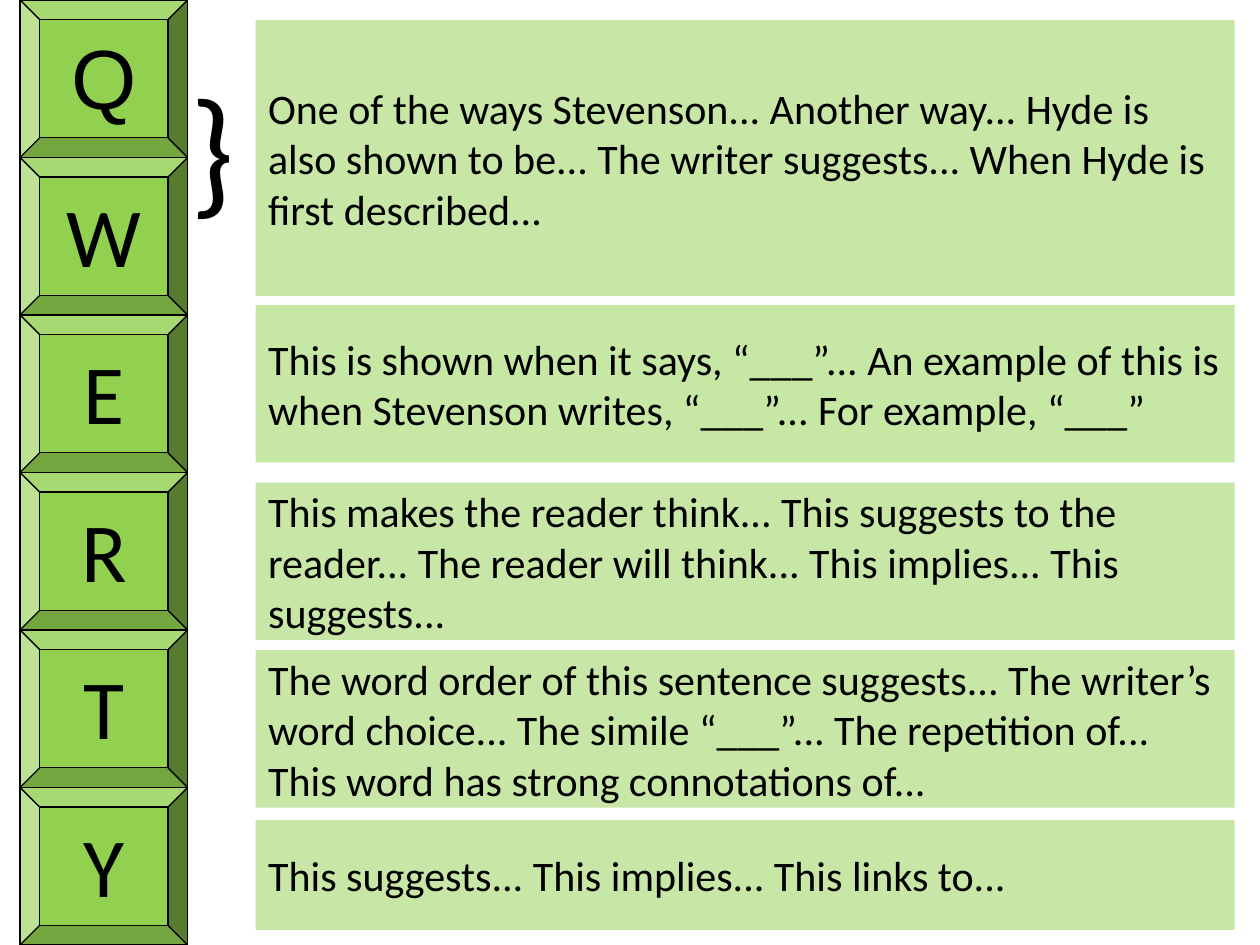
from dataclasses import dataclass

from lxml.etree import SubElement
from pptx import Presentation
from pptx.dml.color import RGBColor
from pptx.enum.shapes import MSO_SHAPE
from pptx.enum.text import MSO_ANCHOR, MSO_AUTO_SIZE, PP_ALIGN
from pptx.oxml.ns import qn
from pptx.util import Inches, Pt


@dataclass(frozen=True)
class Theme:
    green: RGBColor = RGBColor(0x92, 0xD0, 0x50)
    ink: RGBColor = RGBColor(0, 0, 0)
    font: str = "Calibri"
    body: int = 24
    key: int = 48
    brace: int = 80
    edge: float = 0.75


THEME = Theme()
WIDE, HIGH = 10, 7.5

KEYS = [("Q", "Arial")] + [(key, THEME.font) for key in "WERTY"]

# top, height, opacity in percent, wording
PANELS = [
    (0.16, 2.19, 50, "One of the ways Stevenson... Another way... Hyde is also "
     "shown to be... The writer suggests... When Hyde is first described..."),
    (2.42, 1.25, 51, "This is shown when it says, “___”... An example of this is "
     "when Stevenson writes, “___”... For example, “___”"),
    (3.83, 1.25, 50, "This makes the reader think... This suggests to the "
     "reader... The reader will think... This implies... This suggests..."),
    (5.16, 1.25, 50, "The word order of this sentence suggests... The writer’s "
     "word choice... The simile “___”... The repetition of... "
     "This word has strong connotations of..."),
    (6.51, 0.87, 50, "This suggests... This implies... This links to..."),
]

KEY_X, KEY_W = 0.16, 1.33
PANEL_X, PANEL_W = 2.03, 7.77
ROW = HIGH / len(KEYS)


def write(shape, text, size, font=THEME.font, align=PP_ALIGN.LEFT,
          anchor=MSO_ANCHOR.TOP):
    frame = shape.text_frame
    frame.word_wrap = True
    frame.vertical_anchor = anchor
    para = frame.paragraphs[0]
    para.alignment = align
    run = para.add_run()
    run.text = text
    run.font.size = Pt(size)
    run.font.name = font
    run.font.color.rgb = THEME.ink


def add_block(slide, kind, *box):
    shape = slide.shapes.add_shape(kind, *map(Inches, box))
    shape.shadow.inherit = False
    shape.fill.solid()
    shape.fill.fore_color.rgb = THEME.green
    return shape


def add_key(slide, row, key, font):
    shape = add_block(slide, MSO_SHAPE.BEVEL, KEY_X, row * ROW, KEY_W, ROW)
    shape.line.color.rgb = THEME.ink
    shape.line.width = Pt(THEME.edge)
    write(shape, key, THEME.key, font, PP_ALIGN.CENTER)


def add_panel(slide, top, tall, alpha, text):
    shape = add_block(slide, MSO_SHAPE.RECTANGLE, PANEL_X, top, PANEL_W, tall)
    shape.line.fill.background()
    color = shape.fill._xPr.find(qn("a:solidFill"))[0]
    SubElement(color, qn("a:alpha"), val=str(alpha * 1000))
    write(shape, text, THEME.body, anchor=MSO_ANCHOR.MIDDLE)


def add_brace(slide):
    box = slide.shapes.add_textbox(*map(Inches, (1.41, 0.43, 0.55, 1.45)))
    write(box, "}", THEME.brace)
    box.text_frame.auto_size = MSO_AUTO_SIZE.SHAPE_TO_FIT_TEXT


def main():
    deck = Presentation()
    deck.slide_width, deck.slide_height = Inches(WIDE), Inches(HIGH)
    slide = deck.slides.add_slide(deck.slide_layouts[6])
    for row, (key, font) in enumerate(KEYS):
        add_key(slide, row, key, font)
    add_brace(slide)
    for panel in PANELS:
        add_panel(slide, *panel)
    deck.save("out.pptx")


if __name__ == "__main__":
    main()
